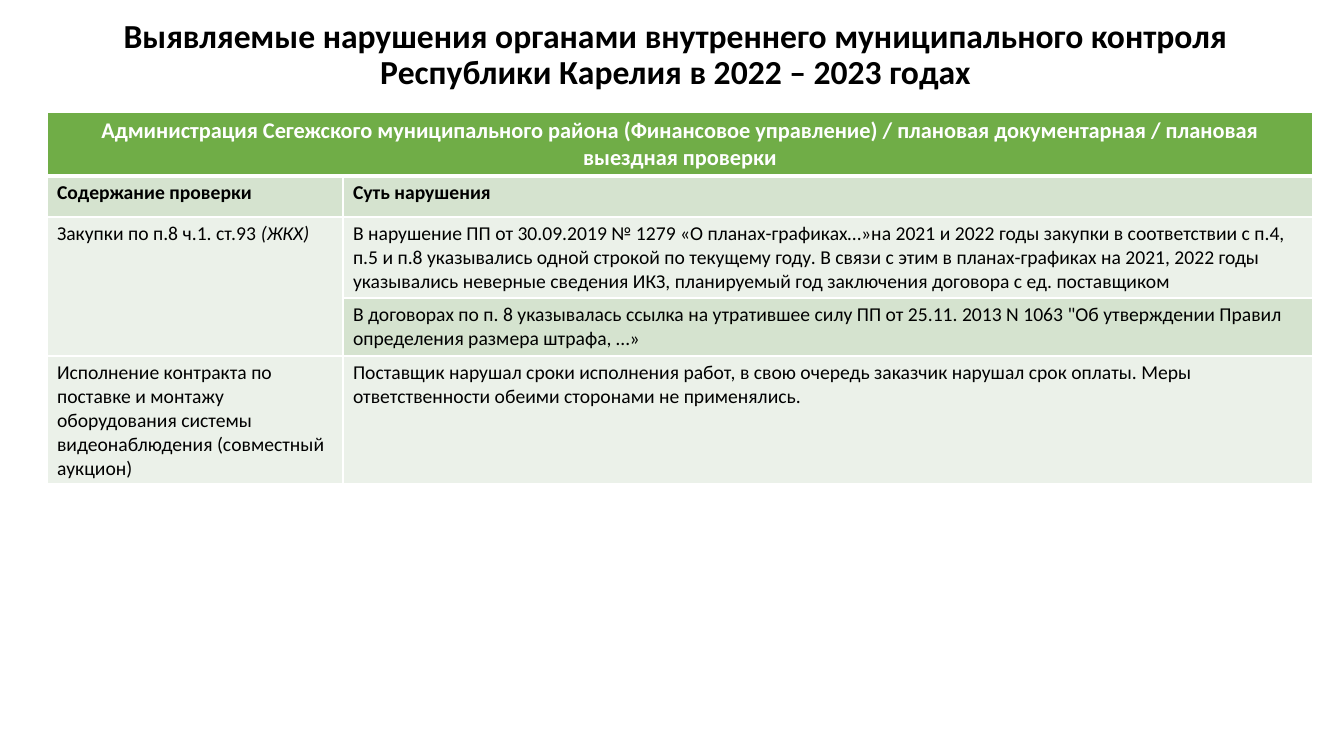
from lxml import etree
from pptx import Presentation
from pptx.dml.color import RGBColor
from pptx.enum.text import MSO_ANCHOR, PP_ALIGN
from pptx.oxml.ns import qn
from pptx.util import Pt

WHITE = RGBColor(0xFF, 0xFF, 0xFF)
BLACK = RGBColor(0x00, 0x00, 0x00)
GREEN = RGBColor(0x70, 0xAD, 0x47)
SAGE = RGBColor(0xD5, 0xE3, 0xCF)
MIST = RGBColor(0xEB, 0xF1, 0xE9)

CENTER = PP_ALIGN.CENTER
LEFT = PP_ALIGN.LEFT
MIDDLE = MSO_ANCHOR.MIDDLE

EMU_PER_PX = 914400 / 100.8
FONT = "Calibri"
BLANK_LAYOUT = 6

TITLE = (
    "Выявляемые нарушения органами внутреннего муниципального контроля "
    "Республики Карелия в 2022 – 2023 годах"
)
COLUMN_WIDTHS = [296, 970]
ROW_HEIGHTS = [64, 41, 81, 58, 126]
ROW_FILLS = [GREEN, SAGE, MIST, SAGE, MIST]
MERGES = [((0, 0), (0, 1)), ((2, 0), (3, 0))]
ROWS = [
    [
        ["Администрация Сегежского муниципального района (Финансовое управление) / "
         "плановая документарная / плановая выездная проверки"],
        [],
    ],
    [["Содержание проверки"], ["Суть нарушения"]],
    [
        ["Закупки по п.8 ч.1. ст.93 ", "(ЖКХ)"],
        ["В нарушение ПП от 30.09.2019 № 1279 «О планах-графиках…»на 2021 и 2022 годы "
         "закупки в соответствии с п.4, п.5 и п.8 указывались одной строкой по текущему "
         "году. В связи с этим в планах-графиках на 2021, 2022 годы указывались неверные "
         "сведения ИКЗ, планируемый год заключения договора с ед. поставщиком"],
    ],
    [
        [],
        ['В договорах по п. 8 указывалась ссылка на утратившее силу ПП от 25.11. 2013 '
         'N 1063 "Об утверждении Правил определения размера штрафа, …»'],
    ],
    [
        ["Исполнение контракта по поставке и монтажу оборудования системы "
         "видеонаблюдения (совместный аукцион)"],
        ["Поставщик нарушал сроки исполнения работ, в свою очередь заказчик нарушал "
         "срок оплаты. Меры ответственности обеими сторонами не применялись."],
    ],
]


def px(length):
    return round(length * EMU_PER_PX)


class SlideBuilder:
    def __init__(self, presentation):
        self.slide = presentation.slides.add_slide(presentation.slide_layouts[BLANK_LAYOUT])

    def fill_paragraph(self, paragraph, parts, size, color, bold, alignment):
        for index, part in enumerate(parts):
            run = paragraph.add_run()
            run.text = part
            if index:
                run.font.italic = True
        paragraph.alignment = alignment
        paragraph.font.name = FONT
        paragraph.font.size = Pt(size)
        paragraph.font.bold = bold
        paragraph.font.color.rgb = color

    def title(self, left, top, width, height, text):
        shape = self.slide.shapes.add_textbox(px(left), px(top), px(width), px(height))
        frame = shape.text_frame
        frame.word_wrap = True
        frame.vertical_anchor = MIDDLE
        paragraph = frame.paragraphs[0]
        paragraph.line_spacing = 0.9
        self.fill_paragraph(paragraph, [text], 24, BLACK, True, CENTER)

    def borders(self, cell, row):
        properties = cell._tc.get_or_add_tcPr()
        widths = {"L": 1, "R": 1, "T": 3 if row == 1 else 1, "B": 3 if row == 0 else 1}
        for side, width in widths.items():
            line = etree.SubElement(properties, qn(f"a:ln{side}"), w=str(Pt(width)))
            fill = etree.SubElement(line, qn("a:solidFill"))
            etree.SubElement(fill, qn("a:srgbClr"), val=str(WHITE))

    def table(self, left, top, column_widths, row_heights, rows, fills, merges):
        table = self.slide.shapes.add_table(
            len(row_heights), len(column_widths), px(left), px(top),
            px(sum(column_widths)), px(sum(row_heights)),
        ).table
        for column, width in zip(table.columns, column_widths):
            column.width = px(width)
        for row, height in zip(table.rows, row_heights):
            row.height = px(height)
        for row, (contents, color) in enumerate(zip(rows, fills)):
            banner = row == 0
            for column, parts in enumerate(contents):
                cell = table.cell(row, column)
                self.borders(cell, row)
                cell.fill.solid()
                cell.fill.fore_color.rgb = color
                self.fill_paragraph(
                    cell.text_frame.paragraphs[0], parts,
                    16 if banner else 14, WHITE if banner else BLACK,
                    row < 2, CENTER if banner else LEFT,
                )
        for first, last in merges:
            table.cell(*first).merge(table.cell(*last))


def main():
    presentation = Presentation()
    presentation.slide_width = px(1344)
    presentation.slide_height = px(756)
    builder = SlideBuilder(presentation)
    builder.title(96, 23, 1159, 65, TITLE)
    builder.table(47, 112, COLUMN_WIDTHS, ROW_HEIGHTS, ROWS, ROW_FILLS, MERGES)
    presentation.save("out.pptx")


if __name__ == "__main__":
    main()
